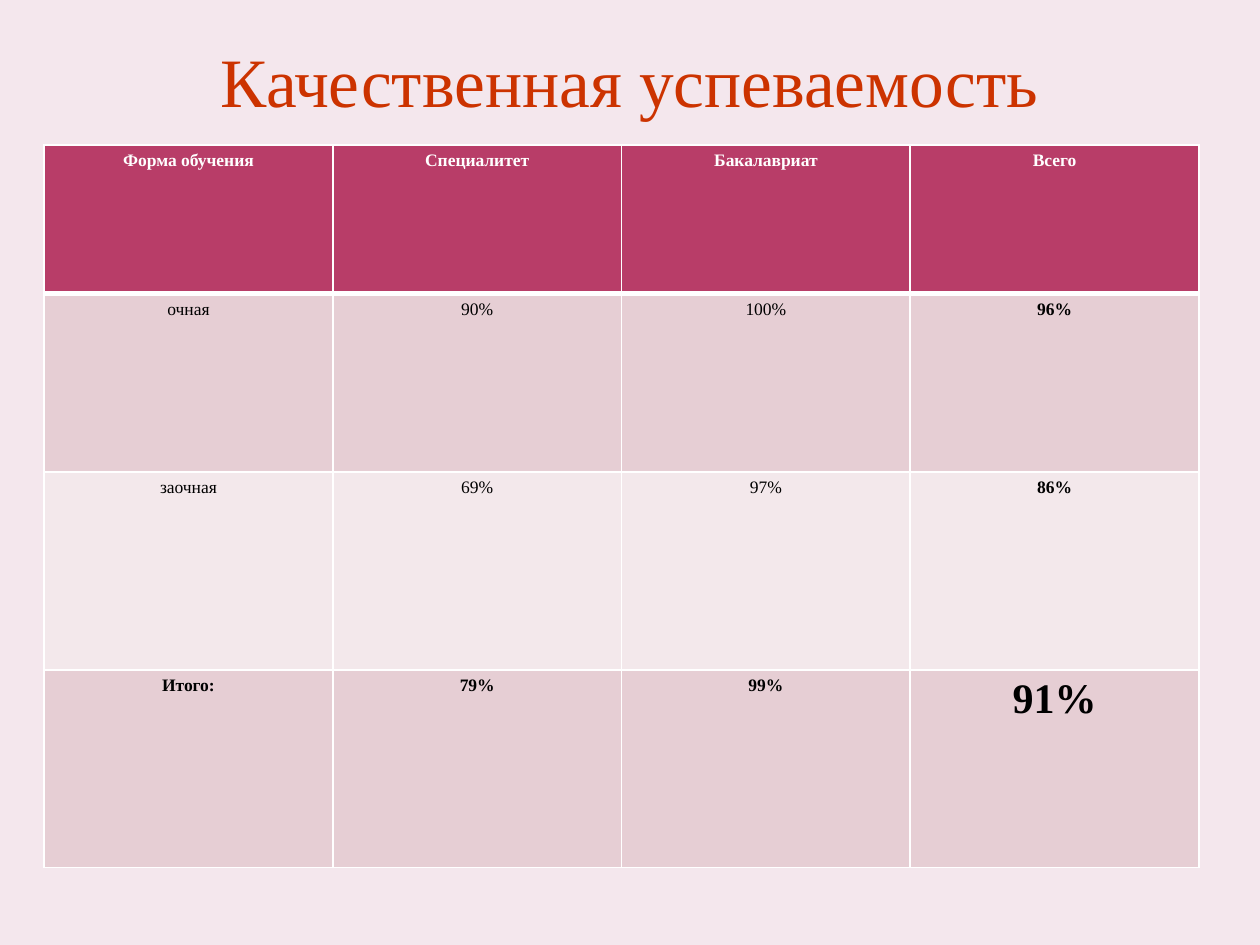
import pptx
import pptx.dml.color
import pptx.enum.text
import pptx.oxml
import pptx.oxml.ns
import pptx.util

Pt = pptx.util.Pt
RGBColor = pptx.dml.color.RGBColor

BACKGROUND = RGBColor(0xF4, 0xE7, 0xED)
TITLE_RED = RGBColor(0xCC, 0x33, 0x00)
HEADER = RGBColor(0xB8, 0x3D, 0x68)
BAND_DARK = RGBColor(0xE6, 0xCE, 0xD4)
BAND_LIGHT = RGBColor(0xF3, 0xE8, 0xEB)
WHITE = RGBColor(0xFF, 0xFF, 0xFF)
BLACK = RGBColor(0, 0, 0)
FONT = "Times New Roman"

ROWS = [
    ["Форма обучения", "Специалитет", "Бакалавриат", "Всего"],
    ["очная", "90%", "100%", "96%"],
    ["заочная", "69%", "97%", "86%"],
    ["Итого:", "79%", "99%", "91%"],
]
ROW_HEIGHTS = [85, 102, 113, 113]
ROW_FILLS = [HEADER, BAND_DARK, BAND_LIGHT, BAND_DARK]


def write_text(tf, text, size=10, color=BLACK, bold=False):
    p = tf.paragraphs[0]
    p.alignment = pptx.enum.text.PP_ALIGN.CENTER
    r = p.add_run()
    r.text = text
    r.font.name = FONT
    r.font.size = Pt(size)
    r.font.bold = bold
    r.font.color.rgb = color


def set_borders(cell, **widths):
    """Draw white borders; widths in points, keyed by side L, R, T, B."""
    tc_pr = cell._tc.get_or_add_tcPr()
    for i, side in enumerate("LRTB"):
        line = pptx.oxml.parse_xml(
            f'<a:ln{side} {pptx.oxml.ns.nsdecls("a")} w="{Pt(widths.get(side, 1))}">'
            f'<a:solidFill><a:srgbClr val="{WHITE}"/></a:solidFill></a:ln{side}>'
        )
        tc_pr.insert(i, line)


def add_title(s, left, top, width, height):
    sp = s.shapes.title
    sp.left, sp.top, sp.width, sp.height = map(Pt, (left, top, width, height))
    tf = sp.text_frame
    tf.word_wrap = True
    tf.vertical_anchor = pptx.enum.text.MSO_ANCHOR.TOP
    tf.margin_top = 0
    write_text(tf, "Качественная успеваемость", size=39.6, color=TITLE_RED)


def add_results_table(s, left, top, width, height):
    count = len(ROWS[0])
    last = len(ROWS) - 1
    table = s.shapes.add_table(
        len(ROWS), count, Pt(left), Pt(top), Pt(width), Pt(height)
    ).table
    for column in table.columns:
        column.width = Pt(width / count)

    for i, values in enumerate(ROWS):
        table.rows[i].height = Pt(ROW_HEIGHTS[i])
        for j, value in enumerate(values):
            cell = table.cell(i, j)
            cell.fill.solid()
            cell.fill.fore_color.rgb = ROW_FILLS[i]
            # A thick rule separates the header from the body
            set_borders(cell, B=3 if i == 0 else 1, T=3 if i == 1 else 1)
            # Header, totals row and totals column are bold
            write_text(
                cell.text_frame,
                value,
                size=24 if (i, j) == (last, count - 1) else 10,
                color=WHITE if i == 0 else BLACK,
                bold=i in (0, last) or j == count - 1,
            )


def main():
    prs = pptx.Presentation()
    prs.slide_width, prs.slide_height = Pt(720), Pt(540)
    s = prs.slides.add_slide(prs.slide_layouts[5])
    s.background.fill.solid()
    s.background.fill.fore_color.rgb = BACKGROUND

    add_title(s, 36, 21.6, 648, 90)
    add_results_table(s, 25.2, 82.8, 660, sum(ROW_HEIGHTS))
    prs.save("out.pptx")


if __name__ == "__main__":
    main()
